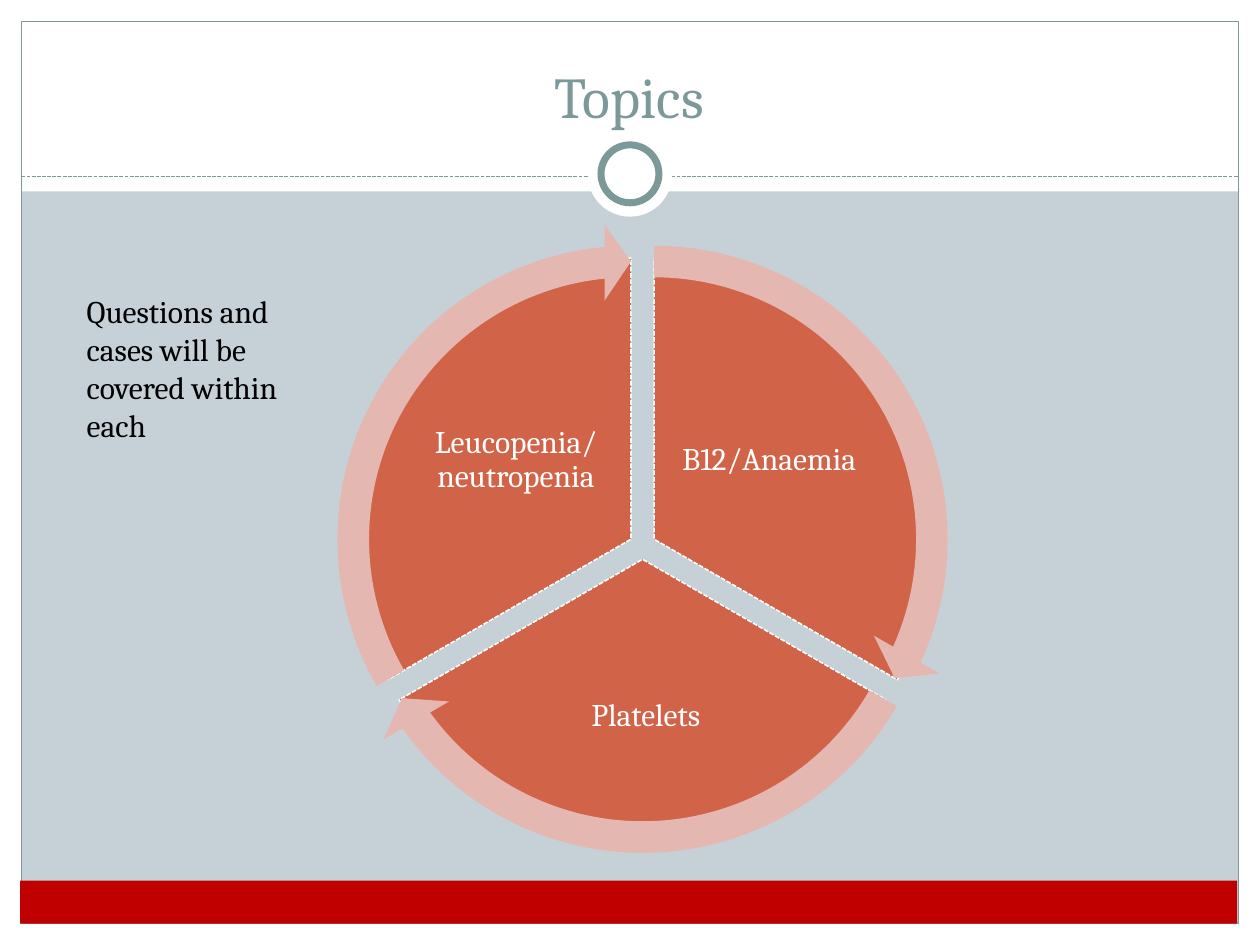
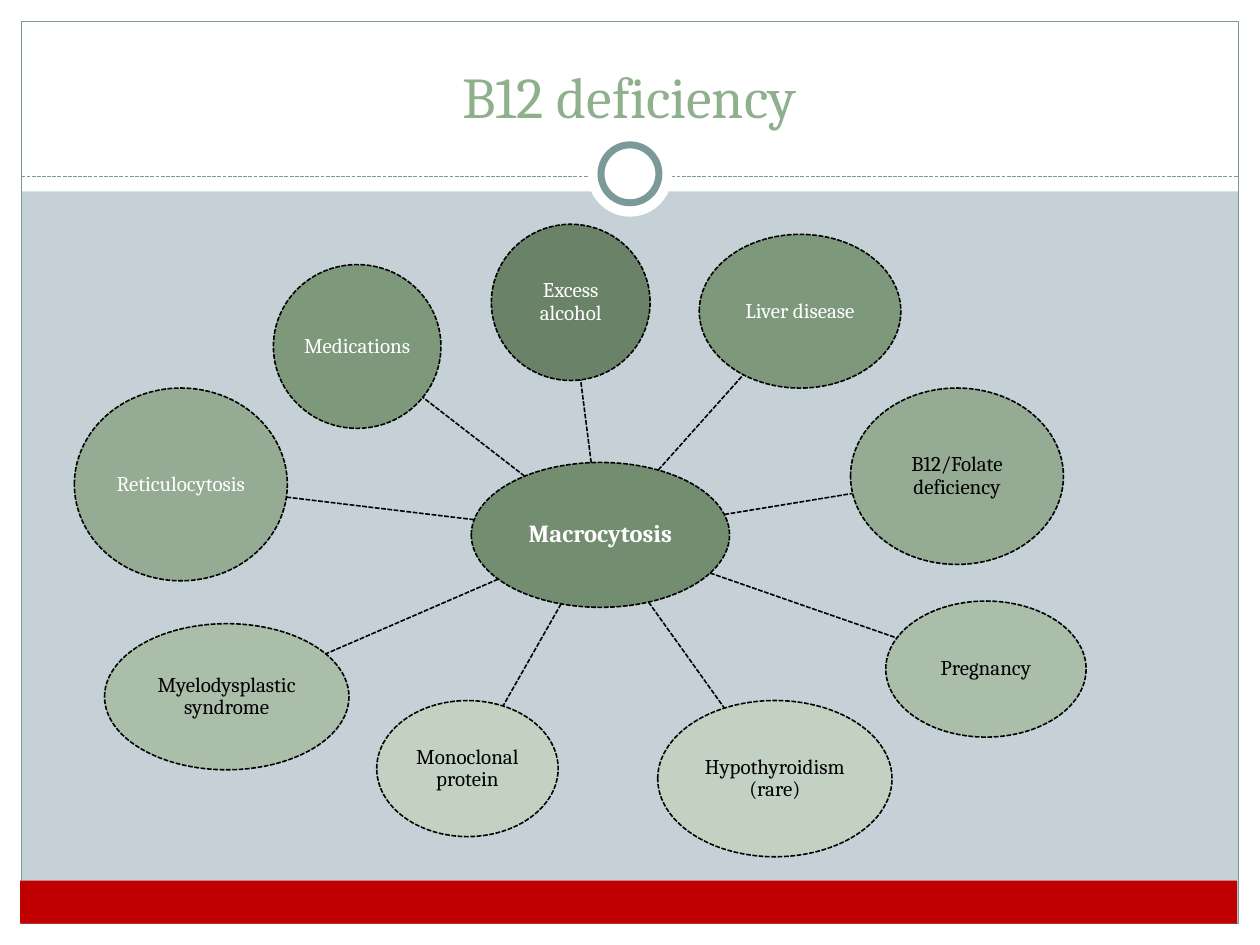
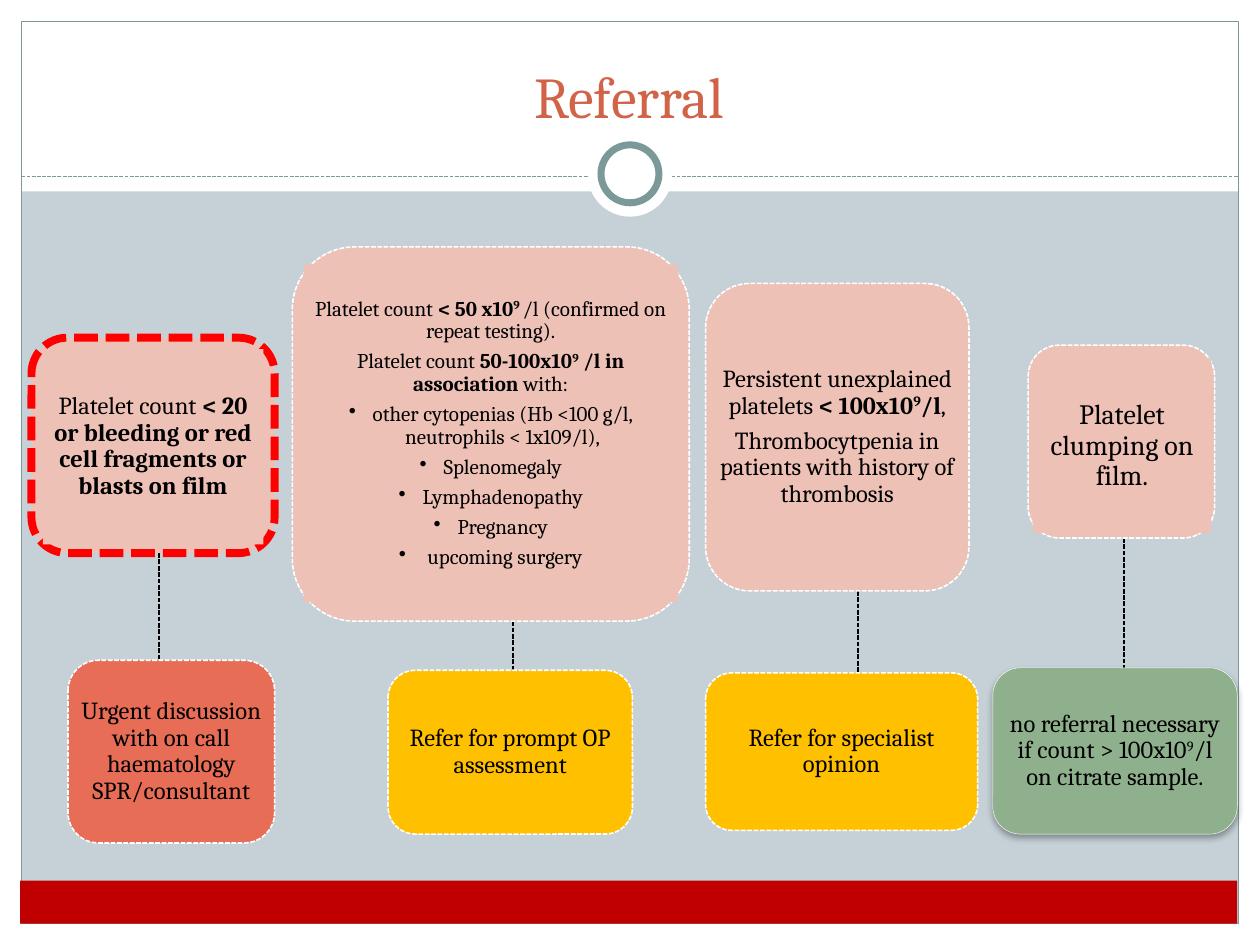
from math import cos, hypot, radians, sin

from lxml.etree import SubElement
from pptx import Presentation
from pptx.dml.color import RGBColor
from pptx.enum.dml import MSO_LINE as Dash
from pptx.enum.shapes import MSO_CONNECTOR as Link, MSO_SHAPE as Shape
from pptx.enum.text import MSO_ANCHOR as Anchor, PP_ALIGN as Align
from pptx.oxml.ns import qn
from pptx.util import Emu, Inches, Pt

WIDTH, HEIGHT = Inches(10), Inches(7.5)
COLUMN, ROW = WIDTH / 100, HEIGHT / 75
FONT = "Cambria"
WHITE, BLACK, TEAL = "FFFFFF", "000000", "7C999A"
GROUND, FOOTER, RED = "C5D1D7", "C00000", "FF0000"
RUST, PALE_RUST, BLUSH = "D16349", "E5B7B1", "EDC1B6"
CORAL, AMBER, GREEN = "E86D57", "FFC000", "8FB08C"
DASHED_WHITE = (WHITE, 0.9, Dash.SQUARE_DOT)
DASHED_BLACK = (BLACK, 0.9, Dash.SQUARE_DOT)
DASHED_TEAL = (TEAL, 0.75, Dash.SQUARE_DOT)
DASHED_RED = (RED, 4.5, Dash.SQUARE_DOT)

SECTORS = [
    ("B12/Anaemia", (53.1, 29.9, 15.9, 13.3)),
    ("Platelets", (39.3, 51, 23.9, 11.7)),
    ("Leucopenia/ neutropenia", (33, 29.9, 15.9, 13.3)),
]

HUB = (37.4, 36.7, 20.5, 11.5)
CAUSES = [
    ("Excess alcohol", (39, 17.8, 12.6, 12.4), "6A8268", WHITE),
    ("Liver disease", (55.5, 18.6, 16, 12.2), "7E987C", WHITE),
    ("B12/Folate deficiency", (67.5, 30.8, 16.9, 14), "95AB93", BLACK),
    ("Pregnancy", (70.3, 47.7, 15.9, 10.8), "ABBEAA", BLACK),
    ("Hypothyroidism (rare)", (52.2, 55.6, 18.6, 12.4), "C2D1C1", BLACK),
    ("Monoclonal protein", (29.9, 55.6, 14.4, 10.8), "C2D1C1", BLACK),
    ("Myelodysplastic syndrome", (8.3, 49.5, 19.4, 11.6), "ABBEAA", BLACK),
    ("Reticulocytosis", (5.9, 30.8, 16.9, 15.3), "95AB93", WHITE),
    ("Medications", (21.7, 21, 13.3, 13), "7E987C", WHITE),
]

FINDINGS = [
    ("Platelet count *< 20 or bleeding or red cell fragments or blasts on film*",
     14, (2.5, 26.8, 19.3, 17.1), (3.4, 27.7, 17.5, 15.5), DASHED_RED),
    ("Platelet count *< 50 x10^9 ^*/l (confirmed on repeat testing).\n"
     "Platelet count *50-100x10^9^ /l in association* with:\n"
     "•other cytopenias (Hb <100 g/l, neutrophils < 1x109/l),\n"
     "•Splenomegaly\n•Lymphadenopathy\n•Pregnancy\n• upcoming surgery",
     12, (23.2, 19.6, 31.5, 29.7), (24.1, 21, 29.7, 26.8), DASHED_WHITE),
    ("Persistent unexplained platelets *< 100x10^9^/l*,\n"
     "Thrombocytpenia in patients with history of thrombosis",
     14, (56, 22.5, 20.9, 24.4), (56.9, 23.7, 19.1, 22), DASHED_WHITE),
    ("Platelet clumping on film.",
     16, (81.6, 27.4, 14.8, 15.3), (82, 28.5, 14.1, 13.8), DASHED_WHITE),
]
ACTIONS = [
    ("Urgent discussion with on call haematology SPR/consultant",
     (5.4, 52.4, 16.4, 14.5), CORAL, DASHED_WHITE),
    ("Refer for prompt OP assessment", (30.8, 53.2, 19.4, 13), AMBER, DASHED_WHITE),
    ("Refer for specialist opinion", (56, 53.4, 21.6, 12.5), AMBER, DASHED_WHITE),
    ("no referral necessary if count > 100x10^9^/l on citrate sample.",
     (78.8, 53, 19.4, 13.2), GREEN, (WHITE, 0.25, None)),
]
LINK_COLUMNS = [12.6, 40.7, 68.1, 89.2]


def rgb(hex_color):
    """Turn a hex string into a colour."""
    return RGBColor.from_string(hex_color)


def assign(target, values):
    """Set every attribute named in a dict of format values."""
    for name, value in values.items():
        setattr(target, name, value)


def place(box):
    """Convert left, top, width and height on the grid to slide lengths."""
    return [Emu(round(n * unit)) for n, unit in zip(box, (COLUMN, ROW) * 2)]


def stroke(line, style):
    """Draw a line with a colour, width and dash, or hide it."""
    if style is None:
        line.fill.background()
        return
    color, width, dash = style
    line.color.rgb = rgb(color)
    assign(line, {"width": Pt(width), "dash_style": dash})


def add_figure(slide, kind, box, fill=None, line=None, adjust=()):
    """Add a preset shape with its fill, outline and adjustments."""
    figure = slide.shapes.add_shape(kind, *place(box))
    figure.shadow.inherit = False
    if fill:
        figure.fill.solid()
        figure.fill.fore_color.rgb = rgb(fill)
    else:
        figure.fill.background()
    stroke(figure.line, line)
    for index, value in enumerate(adjust):
        figure.adjustments[index] = value
    return figure


def add_link(slide, start, end, style):
    """Add a straight line between two grid points."""
    link = slide.shapes.add_connector(Link.STRAIGHT, *place((*start, *end)))
    stroke(link.line, style)
    SubElement(link._element.spPr, qn("a:effectLst"))


def add_runs(paragraph, text):
    """Add runs, with *bold* and ^raised^ parts marked in the text."""
    for bold_index, part in enumerate(text.split("*")):
        for raised_index, piece in enumerate(part.split("^")):
            if not piece:
                continue
            run = paragraph.add_run()
            run.text = piece
            if bold_index % 2:
                run.font.bold = True
            if raised_index % 2:
                run._r.get_or_add_rPr().set("baseline", "30000")


def add_bullet(paragraph):
    """Give a paragraph a hanging bullet."""
    properties = paragraph._p.get_or_add_pPr()
    indent = Inches(0.19)
    properties.set("marL", str(indent))
    properties.set("indent", str(-indent))
    SubElement(properties, qn("a:buChar")).set("char", "•")


def write(holder, text, size, color, margin=0.1, anchor=Anchor.MIDDLE,
          align=Align.CENTER, spacing=0.9, after=0.35):
    """Write lines of marked text into a shape or text box."""
    frame = holder.text_frame
    assign(frame, {"word_wrap": True, "vertical_anchor": anchor})
    if margin is not None:
        sides = ("left", "top", "right", "bottom")
        assign(frame, {f"margin_{side}": Emu(round(margin * ROW)) for side in sides})
    for index, line in enumerate(text.split("\n")):
        paragraph = frame.add_paragraph() if index else frame.paragraphs[0]
        if line.startswith("•"):
            add_bullet(paragraph)
        add_runs(paragraph, line.removeprefix("•"))
        assign(paragraph, {"alignment": align, "line_spacing": spacing,
                           "space_after": Pt(size * after)})
        for run in paragraph.runs:
            assign(run.font, {"name": FONT, "size": Pt(size)})
            run.font.color.rgb = rgb(color)


def add_label(slide, box, text, size, color, **layout):
    """Add a text box."""
    write(slide.shapes.add_textbox(*place(box)), text, size, color, **layout)


def add_soft_shadow(figure):
    """Cast a short downward shadow from a shape."""
    effects = figure._element.spPr.find(qn("a:effectLst"))
    shadow = SubElement(effects, qn("a:outerShdw"), blurRad=str(Pt(4)),
                        dist=str(Pt(2)), dir="5400000", rotWithShape="0")
    color = SubElement(shadow, qn("a:srgbClr"), val=BLACK)
    SubElement(color, qn("a:alpha"), val="35000")


def add_titled_slide(deck, title, color):
    """Add a slide with the shared frame, bands, ring and title."""
    slide = deck.slides.add_slide(deck.slide_layouts[6])
    slide.background.fill.solid()
    slide.background.fill.fore_color.rgb = rgb(GROUND)
    for edge in [(0, 73.3, 100, 1.7), (0, 0, 100, 15.2),
                 (0, 0, 1.7, 75), (98.3, 0, 1.7, 75)]:
        add_figure(slide, Shape.RECTANGLE, edge, WHITE)
    add_figure(slide, Shape.RECTANGLE, (1.7, 1.7, 96.6, 71.6), line=(TEAL, 0.75, None))
    add_link(slide, (1.7, 14), (98.3, 14), DASHED_TEAL)
    add_figure(slide, Shape.OVAL, (46.65, 10.5, 6.7, 6.7), WHITE)
    add_figure(slide, Shape.OVAL, (47.7, 11.5, 4.6, 4.6), WHITE, (TEAL, 4, None))
    add_figure(slide, Shape.RECTANGLE, (1.6, 69.9, 96.6, 3.4), FOOTER)
    add_label(slide, (3.3, 2.5, 93.3, 8.3), title, 33, color, margin=None,
              anchor=Anchor.BOTTOM, spacing=1.0, after=0)
    return slide


def add_sector_part(slide, kind, index, size, fill, line, adjust):
    """Add one third of the wheel, pushed out from the wheel's centre."""
    middle = radians(330 + 120 * index)
    left = 51 + 1.06 * cos(middle) - size / 2
    top = 43.33 + 1.06 * sin(middle) - size / 2
    add_figure(slide, kind, (left, top, size, size), fill, line, adjust)


def add_wheel(slide):
    """Add the wheel of three sectors and the arrows around it."""
    turn, head = 0.6, 3.28
    spans = [((270 + 120 * i) % 360 * turn, (30 + 120 * i) * turn)
             for i in range(len(SECTORS))]
    for index, ((topic, label_box), span) in enumerate(zip(SECTORS, spans)):
        add_sector_part(slide, Shape.PIE, index, 44.6, RUST, DASHED_WHITE, span)
        add_label(slide, label_box, topic, 18, WHITE, margin=0.3)
    for index, (start, end) in enumerate(spans):
        add_sector_part(slide, Shape.CIRCULAR_ARROW, index, 50.1, PALE_RUST, None,
                        (0.05, head, end - head, start, 0.06))


def center(box):
    """Return the middle of a grid box."""
    left, top, width, height = box
    return left + width / 2, top + height / 2


def rim_point(box, target):
    """Return where the line to a target leaves the ellipse in a box."""
    x, y = center(box)
    dx, dy = target[0] - x, target[1] - y
    reach = 1 / hypot(2 * dx / box[2], 2 * dy / box[3])
    return x + dx * reach, y + dy * reach


def add_bubble(slide, box, text, size, fill, color):
    """Add a dashed ellipse with text."""
    bubble = add_figure(slide, Shape.OVAL, box, fill, DASHED_BLACK)
    write(bubble, text, size, color)


def add_cause_map(slide):
    """Add the hub and its surrounding causes, joined from rim to rim."""
    add_bubble(slide, HUB, "*Macrocytosis*", 14, "738D70", WHITE)
    for cause, box, fill, color in CAUSES:
        add_link(slide, rim_point(HUB, center(box)), rim_point(box, center(HUB)),
                 DASHED_BLACK)
        add_bubble(slide, box, cause, 12, fill, color)


def add_pathways(slide):
    """Add each finding above the action it leads to."""
    for finding, action, column in zip(FINDINGS, ACTIONS, LINK_COLUMNS):
        criteria, size, card, panel, outline = finding
        advice, action_box, fill, edge = action
        add_link(slide, (column, card[1] + card[3]), (column, action_box[1]),
                 DASHED_BLACK)
        add_figure(slide, Shape.ROUNDED_RECTANGLE, card, BLUSH, outline)
        write(add_figure(slide, Shape.RECTANGLE, panel, BLUSH), criteria, size, BLACK)
        advice_card = add_figure(slide, Shape.ROUNDED_RECTANGLE, action_box, fill, edge)
        write(advice_card, advice, 14, BLACK)
        if fill == GREEN:
            add_soft_shadow(advice_card)


def main():
    """Build the three slides and save them."""
    deck = Presentation()
    assign(deck, {"slide_width": WIDTH, "slide_height": HEIGHT})

    topics = add_titled_slide(deck, "Topics", TEAL)
    add_wheel(topics)
    add_label(topics, (5.9, 22.7, 21.3, 13.1),
              "Questions and cases will be covered within each", 18, BLACK,
              margin=None, anchor=Anchor.TOP, align=Align.LEFT, spacing=1.0, after=0)

    add_cause_map(add_titled_slide(deck, "B12 deficiency", GREEN))
    add_pathways(add_titled_slide(deck, "Referral", RUST))
    deck.save("out.pptx")


if __name__ == "__main__":
    main()
